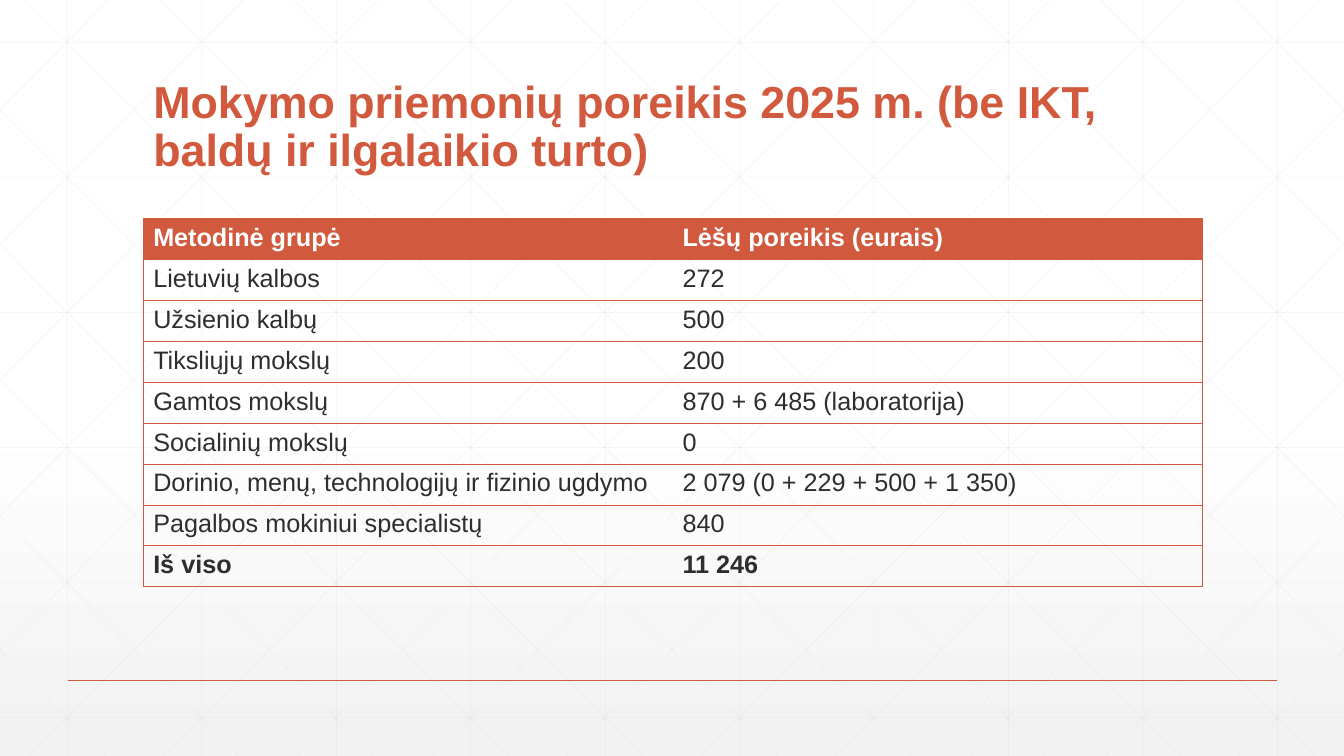
from dataclasses import dataclass

from lxml import etree
from pptx import Presentation
from pptx import util as u
from pptx.dml.color import RGBColor
from pptx.enum import shapes, text
from pptx.oxml.ns import qn


@dataclass(frozen=True)
class Theme:
    font: str = "Arial"
    accent: str = "D15A3E"
    ink: str = "2D2E2D"
    paper: str = "FFFFFF"
    shade: str = "F2F2F2"
    grid: str = "D9D9D9"
    title_size: int = 32
    table_size: int = 18
    grid_width: float = 0.5
    border_width: float = 0.5
    rule_width: float = 1


@dataclass(frozen=True)
class Line:
    x1: float
    y1: float
    x2: float
    y2: float


@dataclass(frozen=True)
class Need:
    group: str
    euros: str
    bold: bool = False


THEME = Theme()
WIDTH, HEIGHT = 13.33, 7.5
STEP = 4 / 3
DIAGONAL_RUN = 7.46 / HEIGHT

TITLE = "Mokymo priemonių poreikis 2025 m. (be IKT, baldų ir ilgalaikio turto)"
NEEDS = [
    Need("Metodinė grupė", "Lėšų poreikis (eurais)", True),
    Need("Lietuvių kalbos", "272"),
    Need("Užsienio kalbų", "500"),
    Need("Tiksliųjų mokslų", "200"),
    Need("Gamtos mokslų", "870 + 6 485 (laboratorija)"),
    Need("Socialinių mokslų", "0"),
    Need("Dorinio, menų, technologijų ir fizinio ugdymo", "2 079 (0 + 229 + 500 + 1 350)"),
    Need("Pagalbos mokiniui specialistų", "840"),
    Need("Iš viso", "11 246", True),
]


def diagonal(start: float) -> Line:
    top = max(0, -start / DIAGONAL_RUN)
    bottom = min(HEIGHT, (WIDTH - start) / DIAGONAL_RUN)
    return Line(start + top * DIAGONAL_RUN, top, start + bottom * DIAGONAL_RUN, bottom)


def mirrored(line: Line) -> Line:
    return Line(WIDTH - line.x1, line.y1, WIDTH - line.x2, line.y2)


def grid_lines() -> list[Line]:
    columns = [0.67 + STEP * i for i in range(10)]
    rows = [0.42 + 1.34 * i for i in range(6)]
    falling = [diagonal(0.25 + STEP * i) for i in range(-5, 10)]
    return (
        [Line(x, 0, x, HEIGHT) for x in columns]
        + [Line(0, y, WIDTH, y) for y in rows]
        + falling
        + [mirrored(line) for line in falling]
    )


def draw_line(slide, line: Line, color: str, width: float, opacity: int = 100) -> None:
    ends = [u.Inches(v) for v in (line.x1, line.y1, line.x2, line.y2)]
    connector = slide.shapes.add_connector(shapes.MSO_CONNECTOR.STRAIGHT, *ends)
    connector.line.color.rgb = RGBColor.from_string(color)
    connector.line.width = u.Pt(width)
    properties = connector._element.spPr
    etree.SubElement(properties, qn("a:effectLst"))
    if opacity < 100:
        tint = properties.find(".//" + qn("a:srgbClr"))
        etree.SubElement(tint, qn("a:alpha"), val=str(opacity * 1000))


def draw_background(slide) -> None:
    fill = slide.background.fill
    fill.gradient()
    fill.gradient_angle = 270
    stops = slide._element.find(".//" + qn("a:gsLst"))
    for stop in list(stops):
        stops.remove(stop)
    for position, color in ((0, THEME.paper), (53, THEME.paper), (100, THEME.shade)):
        stop = etree.SubElement(stops, qn("a:gs"), pos=str(position * 1000))
        etree.SubElement(stop, qn("a:srgbClr"), val=color)


def add_run(paragraph, wording: str, size: float, color: str, bold: bool) -> None:
    run = paragraph.add_run()
    run.text = wording
    run.font.name = THEME.font
    run.font.size = u.Pt(size)
    run.font.bold = bold
    run.font.color.rgb = RGBColor.from_string(color)


def draw_title(slide) -> None:
    title = slide.shapes.title
    title.left, title.top = u.Inches(1.42), u.Inches(0.55)
    title.width, title.height = u.Inches(10.5), u.Inches(1.25)
    frame = title.text_frame
    frame.word_wrap = True
    frame.auto_size = text.MSO_AUTO_SIZE.NONE
    frame.vertical_anchor = text.MSO_ANCHOR.BOTTOM
    paragraph = frame.paragraphs[0]
    paragraph.alignment = text.PP_ALIGN.LEFT
    paragraph.line_spacing = 0.9
    add_run(paragraph, TITLE, THEME.title_size, THEME.accent, True)
    slide.shapes._spTree.append(title._element)


def set_borders(cell, visible: dict[str, bool]) -> None:
    properties = cell._tc.get_or_add_tcPr()
    for index, (side, shown) in enumerate(visible.items()):
        border = etree.Element(qn(f"a:ln{side}"), w=str(u.Pt(THEME.border_width)))
        if shown:
            fill = etree.SubElement(border, qn("a:solidFill"))
            etree.SubElement(fill, qn("a:srgbClr"), val=THEME.accent)
        else:
            etree.SubElement(border, qn("a:noFill"))
        properties.insert(index, border)


def draw_needs(slide) -> None:
    table = slide.shapes.add_table(
        len(NEEDS), 2, u.Inches(1.42), u.Inches(2.17), u.Inches(10.5), u.Inches(3.65)
    ).table
    table.horz_banding = False
    for row, need in enumerate(NEEDS):
        header = row == 0
        for column, wording in enumerate((need.group, need.euros)):
            cell = table.cell(row, column)
            if header:
                cell.fill.solid()
                cell.fill.fore_color.rgb = RGBColor.from_string(THEME.accent)
            else:
                cell.fill.background()
            set_borders(cell, {"L": column == 0, "R": column == 1, "T": True, "B": True})
            color = THEME.paper if header else THEME.ink
            add_run(cell.text_frame.paragraphs[0], wording, THEME.table_size, color, need.bold)


def main() -> None:
    deck = Presentation()
    deck.slide_width, deck.slide_height = u.Inches(WIDTH), u.Inches(HEIGHT)
    slide = deck.slides.add_slide(deck.slide_layouts.get_by_name("Title Only"))
    draw_background(slide)
    for line in grid_lines():
        draw_line(slide, line, THEME.grid, THEME.grid_width, 25)
    draw_line(slide, Line(0.67, 6.75, 12.67, 6.75), THEME.accent, THEME.rule_width)
    draw_title(slide)
    draw_needs(slide)
    deck.save("out.pptx")


if __name__ == "__main__":
    main()
